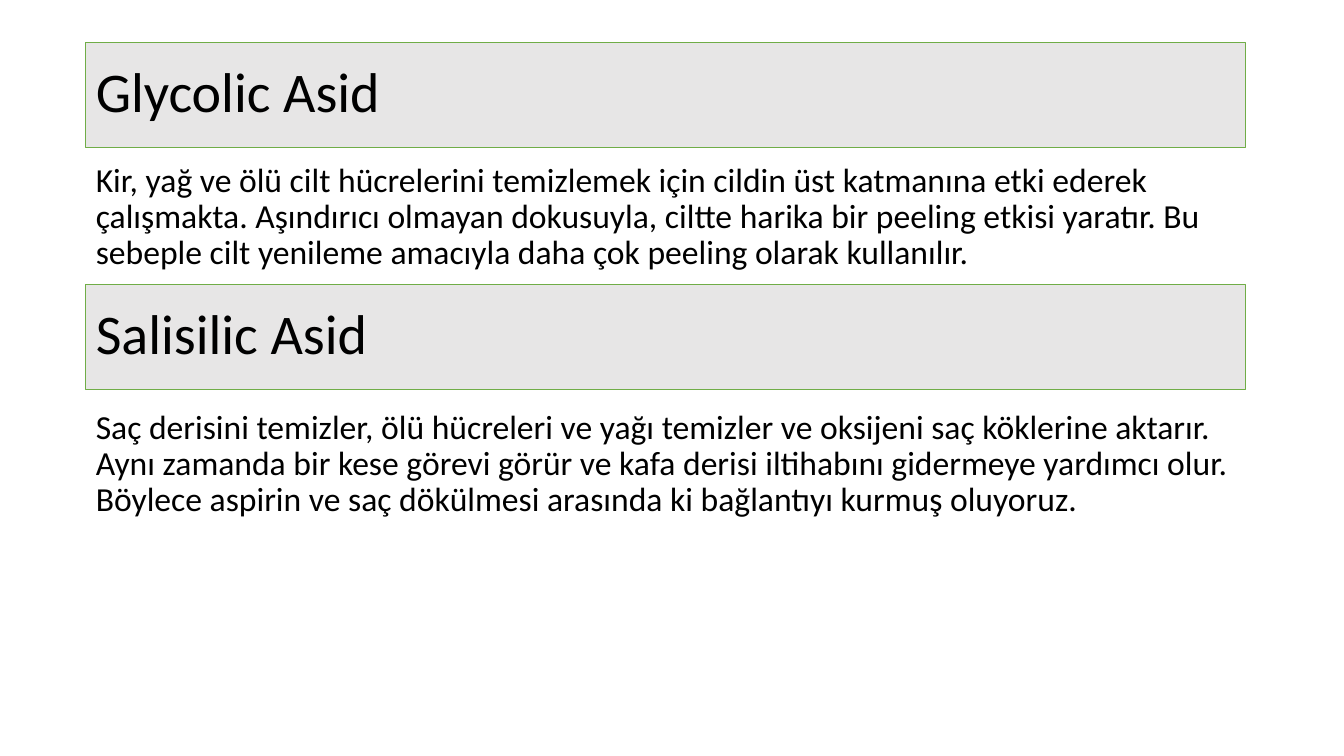
from lxml.etree import SubElement
from pptx import Presentation
from pptx.dml.color import RGBColor
from pptx.enum.text import MSO_ANCHOR, MSO_AUTO_SIZE, PP_ALIGN
from pptx.oxml.ns import qn
from pptx.util import Inches, Pt

LEFT, WIDTH, HEADING_HEIGHT = 0.85, 11.5, 1.04
ACIDS = [
    ("Glycolic Asid", 0.42, 0,
     "Kir, yağ ve ölü cilt hücrelerini temizlemek için cildin üst katmanına etki "
     "ederek çalışmakta. Aşındırıcı olmayan dokusuyla, ciltte harika bir peeling "
     "etkisi yaratır. Bu sebeple cilt yenileme amacıyla daha çok peeling olarak "
     "kullanılır.", 1.57, 1.66, 2),
    ("Salisilic Asid", 2.82, 3,
     "Saç derisini temizler, ölü hücreleri ve yağı temizler ve oksijeni saç "
     "köklerine aktarır. Aynı zamanda bir kese görevi görür ve kafa derisi "
     "iltihabını gidermeye yardımcı olur. Böylece aspirin ve saç dökülmesi "
     "arasında ki bağlantıyı kurmuş oluyoruz.", 4.02, 2.16, 4),
]


def color(value):
    """Return the colour for a hex string."""
    return RGBColor.from_string(value)


def fill_placeholder(sp, text, top, height, size, space, anchor):
    """Place a placeholder in the column and set its unbulleted text."""
    sp.left, sp.top = Inches(LEFT), Inches(top)
    sp.width, sp.height = Inches(WIDTH), Inches(height)
    tf = sp.text_frame
    tf.text = text
    tf.word_wrap = True
    tf.auto_size = MSO_AUTO_SIZE.NONE
    tf.vertical_anchor = anchor
    p = tf.paragraphs[0]
    p.alignment = PP_ALIGN.LEFT
    p.line_spacing = 0.9
    p.space_before = Pt(space)
    pPr = p._p.get_or_add_pPr()
    pPr.set("marL", "0")
    pPr.set("indent", "0")
    SubElement(pPr, qn("a:buNone"))
    font = p.runs[0].font
    font.name, font.size, font.bold = "Calibri", Pt(size), False
    font.color.rgb = color("000000")


def add_heading(sp, text, top):
    """Format a placeholder as a grey heading bar with a green outline."""
    fill_placeholder(sp, text, top, HEADING_HEIGHT, 40, 8, MSO_ANCHOR.MIDDLE)
    sp.fill.solid()
    sp.fill.fore_color.rgb = color("E7E6E6")
    sp.line.color.rgb = color("70AD47")
    sp.line.width = Pt(0.5)


def build_acid_slide(prs):
    """Add the slide with a heading and a description for each acid."""
    s = prs.slides.add_slide(prs.slide_layouts[4])
    holders = {sp.placeholder_format.idx: sp for sp in s.placeholders}
    unused = holders[1].element
    unused.getparent().remove(unused)
    for name, top, idx, text, text_top, text_height, text_idx in ACIDS:
        add_heading(holders[idx], name, top)
        fill_placeholder(holders[text_idx], text, text_top, text_height,
                         24, 10, MSO_ANCHOR.TOP)


def main():
    """Build and save the presentation."""
    prs = Presentation()
    prs.slide_width, prs.slide_height = Inches(13.33), Inches(7.5)
    build_acid_slide(prs)
    prs.save("out.pptx")


if __name__ == "__main__":
    main()
